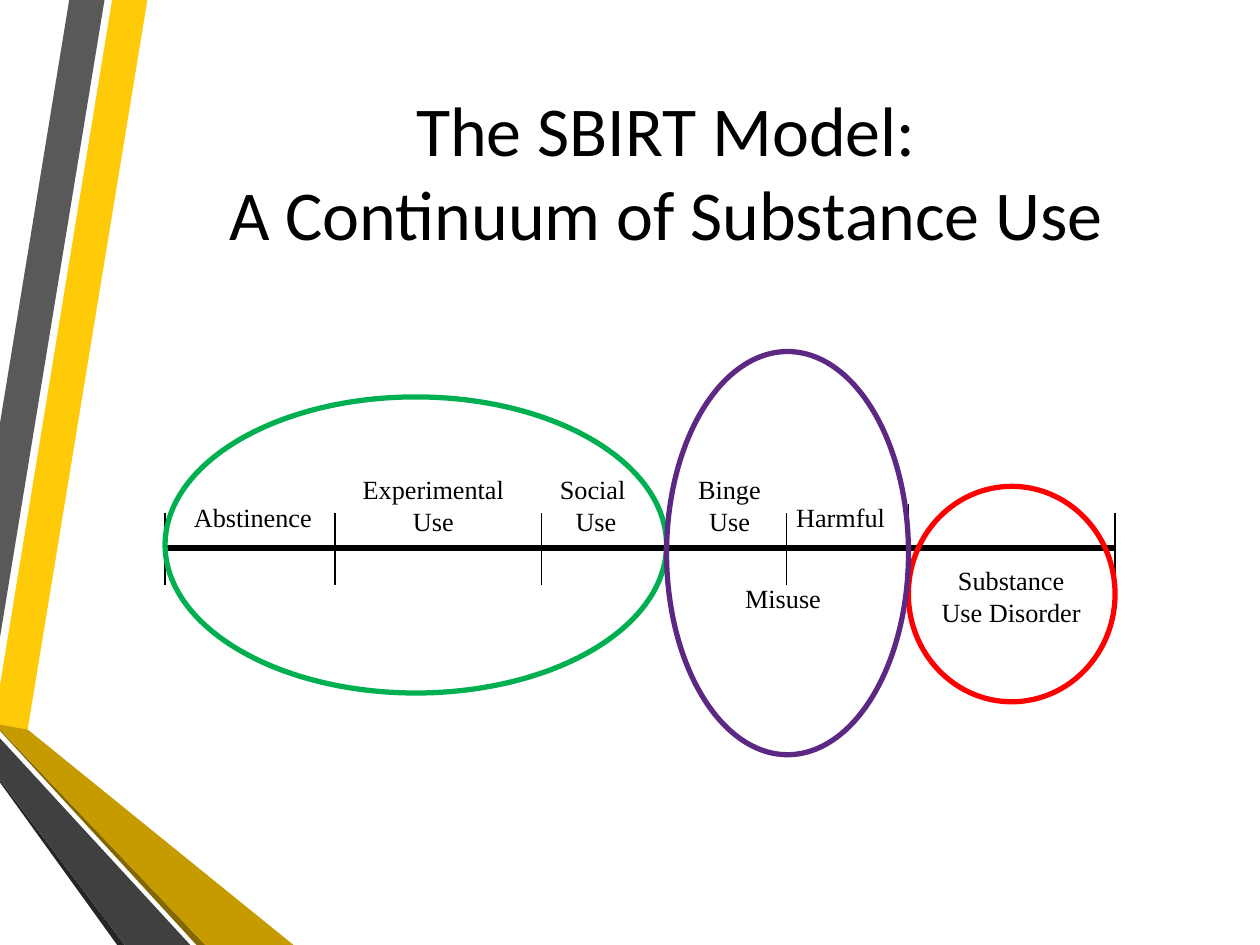
import pptx
import pptx.dml.color
import pptx.enum.shapes
import pptx.enum.text
import pptx.oxml.ns
import pptx.util
from lxml import etree

Inches = pptx.util.Inches
Pt = pptx.util.Pt
RGB = pptx.dml.color.RGBColor.from_string
ALIGN = pptx.enum.text.PP_ALIGN
ANCHOR = pptx.enum.text.MSO_ANCHOR

COLORS = {
    "black": "000000",
    "yellow": "FFCA08",
    "gray": "595959",
    "near_black": "262626",
    "brown": "846700",
    "gold": "C59B00",
    "charcoal": "404040",
    "green": "00B050",
    "red": "FF0000",
    "purple": "5D2884",
}

deck = pptx.Presentation()
deck.slide_width, deck.slide_height = Inches(10), Inches(7.5)
page = deck.slides.add_slide(deck.slide_layouts[6])


def add_text(text, left, top, width, height, size=15, font="Times New Roman",
             align=ALIGN.CENTER, anchor=ANCHOR.TOP):
    box = page.shapes.add_textbox(Inches(left), Inches(top), Inches(width), Inches(height))
    frame = box.text_frame
    frame.word_wrap = True
    frame.vertical_anchor = anchor
    para = frame.paragraphs[0]
    para.text = text
    para.alignment = align
    para.font.size = Pt(size)
    para.font.name = font
    for span in para.runs:
        span.font.size = Pt(size)
        span.font.name = font
        span.font.color.rgb = RGB(COLORS["black"])


def add_line(x1, y1, x2, y2, weight):
    line = page.shapes.add_connector(
        pptx.enum.shapes.MSO_CONNECTOR.STRAIGHT,
        Inches(x1), Inches(y1), Inches(x2), Inches(y2))
    line.line.color.rgb = RGB(COLORS["black"])
    line.line.width = Pt(weight)
    properties = line._element.spPr
    etree.SubElement(properties, pptx.oxml.ns.qn("a:effectLst"))


# Ribbons along the left edge
ribbons = [
    ("yellow", [(0, 5.44), (0, 5.75), (0.22, 5.79), (1.17, 0), (0.89, 0)]),
    ("gray", [(0.83, 0), (0.55, 0), (0, 3.36), (0, 5.06)]),
    ("near_black", [(0, 6.19), (0, 6.21), (0.93, 7.5), (0.99, 7.5)]),
    ("brown", [(0, 5.79), (0, 5.8), (1.56, 7.5), (1.63, 7.5)]),
    ("gold", [(0, 5.79), (1.63, 7.5), (2.33, 7.5), (0.22, 5.79), (0, 5.75)]),
    ("charcoal", [(0, 6.19), (0.99, 7.5), (1.51, 7.5), (0, 5.86)]),
]
for color, points in ribbons:
    corners = [(Inches(x), Inches(y)) for x, y in points]
    builder = page.shapes.build_freeform(*corners[0])
    builder.add_line_segments(corners[1:], close=True)
    ribbon = builder.convert_to_shape()
    ribbon.shadow.inherit = False
    ribbon.fill.solid()
    ribbon.fill.fore_color.rgb = RGB(COLORS[color])
    ribbon.line.fill.background()

add_text("The SBIRT Model:\vA Continuum of Substance Use", 1.07, 0.5, 8.43, 1.7,
         size=40, font="Calibri", anchor=ANCHOR.MIDDLE)

# Continuum axis with a tick at each stage boundary
axis_y = 4.35
tick_top, tick_bottom = 4.07, 4.64
start, misuse_start, disorder_start, end = 1.31, 5.29, 7.21, 8.85
add_line(start, axis_y, end, axis_y, 3)
for x in (start, 2.66, 4.3, misuse_start, 6.24, end):
    add_line(x, tick_top, x, tick_bottom, 0.75)
add_line(disorder_start, 4, disorder_start, tick_bottom, 0.75)

# Stage labels
add_text("Abstinence", 1.44, 3.93, 1.14, 0.35, align=ALIGN.LEFT)
add_text("Experimental Use", 2.66, 3.71, 1.56, 0.69)
add_text("Social \vUse", 4.25, 3.71, 0.96, 0.61)
add_text("Binge Use", misuse_start, 3.71, 1, 0.69)
add_text("Harmful", 6.22, 3.93, 1.26, 0.4, align=ALIGN.LEFT)
add_text("Substance Use Disorder", 7.35, 4.43, 1.35, 0.98)

# Ellipses spanning the groups of stages
groups = [
    ("green", start, misuse_start, 3.15, 2.35),
    ("red", disorder_start, end, 3.86, 1.71),
    ("purple", misuse_start, disorder_start, 2.79, 3.2),
]
for color, left, right, top, height in groups:
    ellipse = page.shapes.add_shape(
        pptx.enum.shapes.MSO_SHAPE.OVAL,
        Inches(left), Inches(top), Inches(right - left), Inches(height))
    ellipse.shadow.inherit = False
    ellipse.fill.background()
    ellipse.line.color.rgb = RGB(COLORS[color])
    ellipse.line.width = Pt(3)

add_text("Misuse", 5.55, 4.57, 1.33, 0.4)

deck.save("out.pptx")
